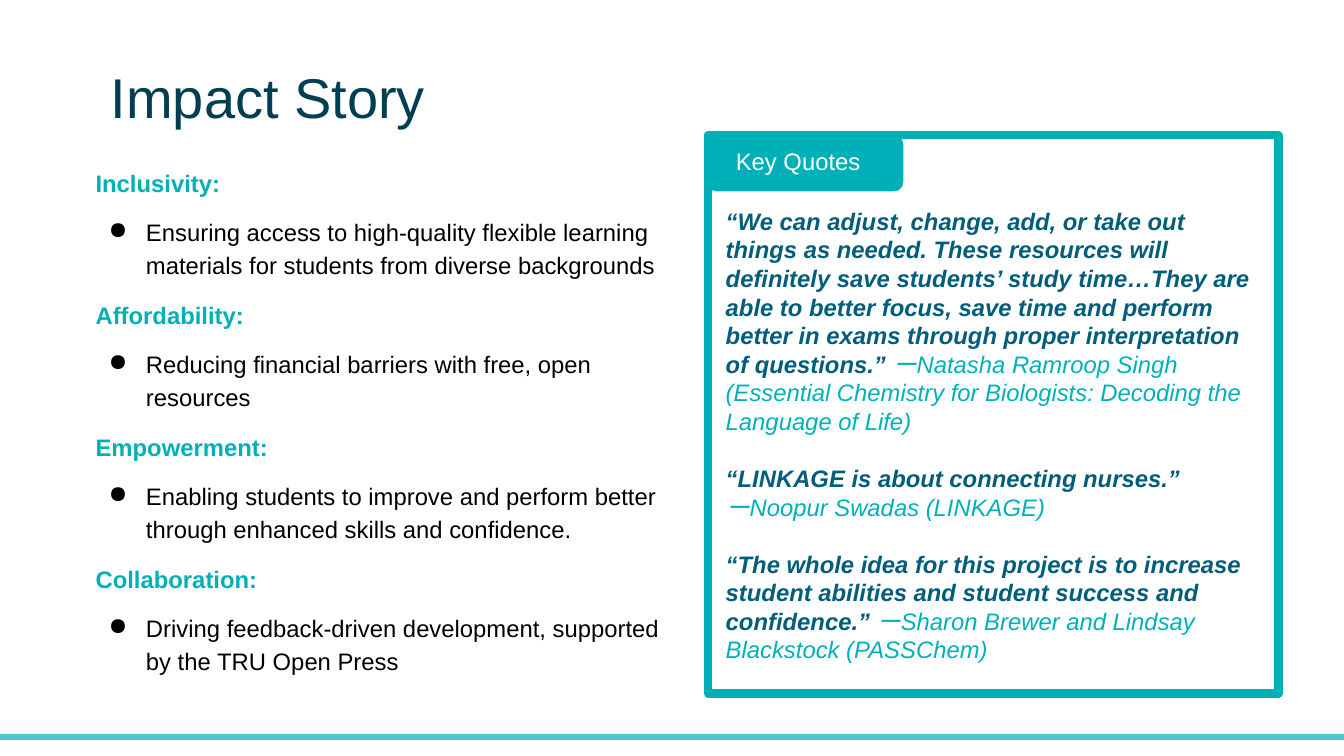
from lxml.etree import SubElement
from pptx import Presentation
from pptx.dml.color import RGBColor
from pptx.enum.shapes import MSO_SHAPE
from pptx.enum.text import MSO_ANCHOR
from pptx.oxml.ns import qn
from pptx.util import Inches, Pt

TEAL = RGBColor(0x00, 0xB0, 0xB9)
DARK_TEAL = RGBColor(0x00, 0x3E, 0x51)
BLUE = RGBColor(0x00, 0x5D, 0x7B)
BLACK = RGBColor(0x00, 0x00, 0x00)
WHITE = RGBColor(0xFF, 0xFF, 0xFF)
FONT = "Arial"

IMPACTS = [
    ("Inclusivity:", "Ensuring access to high-quality flexible learning "
     "materials for students from diverse backgrounds"),
    ("Affordability:", "Reducing financial barriers with free, open resources"),
    ("Empowerment:", "Enabling students to improve and perform better through "
     "enhanced skills and confidence."),
    ("Collaboration:", "Driving feedback-driven development, supported by the "
     "TRU Open Press"),
]

# Quote, speaker, and whether the speaker starts a new line
QUOTES = [
    ("“We can adjust, change, add, or take out things as needed. These "
     "resources will definitely save students’ study time…They are able to "
     "better focus, save time and perform better in exams through proper "
     "interpretation of questions.” ",
     "ーNatasha Ramroop Singh (Essential Chemistry for Biologists: Decoding "
     "the Language of Life)", False),
    ("“LINKAGE is about connecting nurses.”",
     "ーNoopur Swadas (LINKAGE)", True),
    ("“The whole idea for this project is to increase student abilities and "
     "student success and confidence.” ",
     "ーSharon Brewer and Lindsay Blackstock (PASSChem)", False),
]


def add_panel(page, kind, left, top, width, height, fill=None, alpha=None, line_width=None):
    panel = page.shapes.add_shape(
        kind, Inches(left), Inches(top), Inches(width), Inches(height))
    panel.shadow.inherit = False
    if fill is None:
        panel.fill.background()
    else:
        panel.fill.solid()
        panel.fill.fore_color.rgb = fill
    if alpha is not None:
        color = panel.fill._xPr.find(".//" + qn("a:srgbClr"))
        SubElement(color, qn("a:alpha"), val=str(alpha * 1000))
    if line_width is None:
        panel.line.fill.background()
    else:
        panel.line.color.rgb = TEAL
        panel.line.width = Pt(line_width)
    return panel


def add_box(page, left, top, width, height, inset=0.1, anchor=MSO_ANCHOR.TOP):
    box = page.shapes.add_textbox(
        Inches(left), Inches(top), Inches(width), Inches(height))
    frame = box.text_frame
    frame.word_wrap = True
    frame.vertical_anchor = anchor
    frame.margin_left = frame.margin_right = Inches(0.1)
    frame.margin_top = frame.margin_bottom = Inches(inset)
    return frame


def add_para(frame, line_spacing=1.0, before=0, bullet=False):
    """Use the empty first paragraph of the frame, then add further ones."""
    para = frame.paragraphs[0]
    if para.runs:
        para = frame.add_paragraph()
    para.line_spacing = line_spacing
    para.space_before = Pt(before)
    if bullet:
        properties = para._p.get_or_add_pPr()
        properties.set("marL", str(Inches(0.5)))
        properties.set("indent", str(Inches(-0.37)))
        color = SubElement(properties, qn("a:buClr"))
        SubElement(color, qn("a:srgbClr"), val=str(BLACK))
        SubElement(properties, qn("a:buChar"), char="●")
    return para


def add_span(para, text, color, size=17, bold=False, italic=False):
    span = para.add_run()
    span.text = text
    span.font.name = FONT
    span.font.size = Pt(size)
    span.font.color.rgb = color
    span.font.bold = bold
    span.font.italic = italic


def add_impacts(page):
    frame = add_box(page, 0.85, 1.57, 5.96, 5.2)
    for index, (heading, detail) in enumerate(IMPACTS):
        para = add_para(frame, 1.15 if index else 1.0, 12 if index else 0)
        add_span(para, heading, TEAL, bold=True)
        para = add_para(frame, 1.15, 12, bullet=True)
        add_span(para, detail, BLACK)


def add_quotes(page):
    frame = add_box(page, 7.1, 1.95, 5.4, 4.44)
    for index, (quote, speaker, new_line) in enumerate(QUOTES):
        para = add_para(frame, before=20.4 if index else 0)
        add_span(para, quote, BLUE, bold=True, italic=True)
        if new_line:
            para = add_para(frame)
        add_span(para, speaker, TEAL, italic=True)


def main():
    deck = Presentation()
    deck.slide_width = Inches(13.33)
    deck.slide_height = Inches(7.5)
    page = deck.slides.add_slide(deck.slide_layouts[6])

    # Footer bar and quote frame
    add_panel(page, MSO_SHAPE.RECTANGLE, 0, 7.28, 13.33, 0.06, fill=TEAL, alpha=70)
    add_panel(page, MSO_SHAPE.RECTANGLE, 7.02, 1.34, 5.66, 5.54, line_width=6)

    # Title
    title = add_box(page, 1, 0.66, 11.02, 0.68, inset=0.05, anchor=MSO_ANCHOR.MIDDLE)
    add_span(add_para(title, 0.9), "Impact Story", DARK_TEAL, size=40)

    # Left and right text
    add_impacts(page)
    add_quotes(page)

    # Tab of the quote frame
    tab = add_panel(page, MSO_SHAPE.ROUNDED_RECTANGLE, 7.02, 1.34, 1.94, 0.56, fill=TEAL)
    tab.adjustments[0] = 0.167
    label = add_box(page, 7.2, 1.36, 1.57, 0.56)
    add_span(add_para(label), "Key Quotes", WHITE)

    deck.save("out.pptx")


if __name__ == "__main__":
    main()
